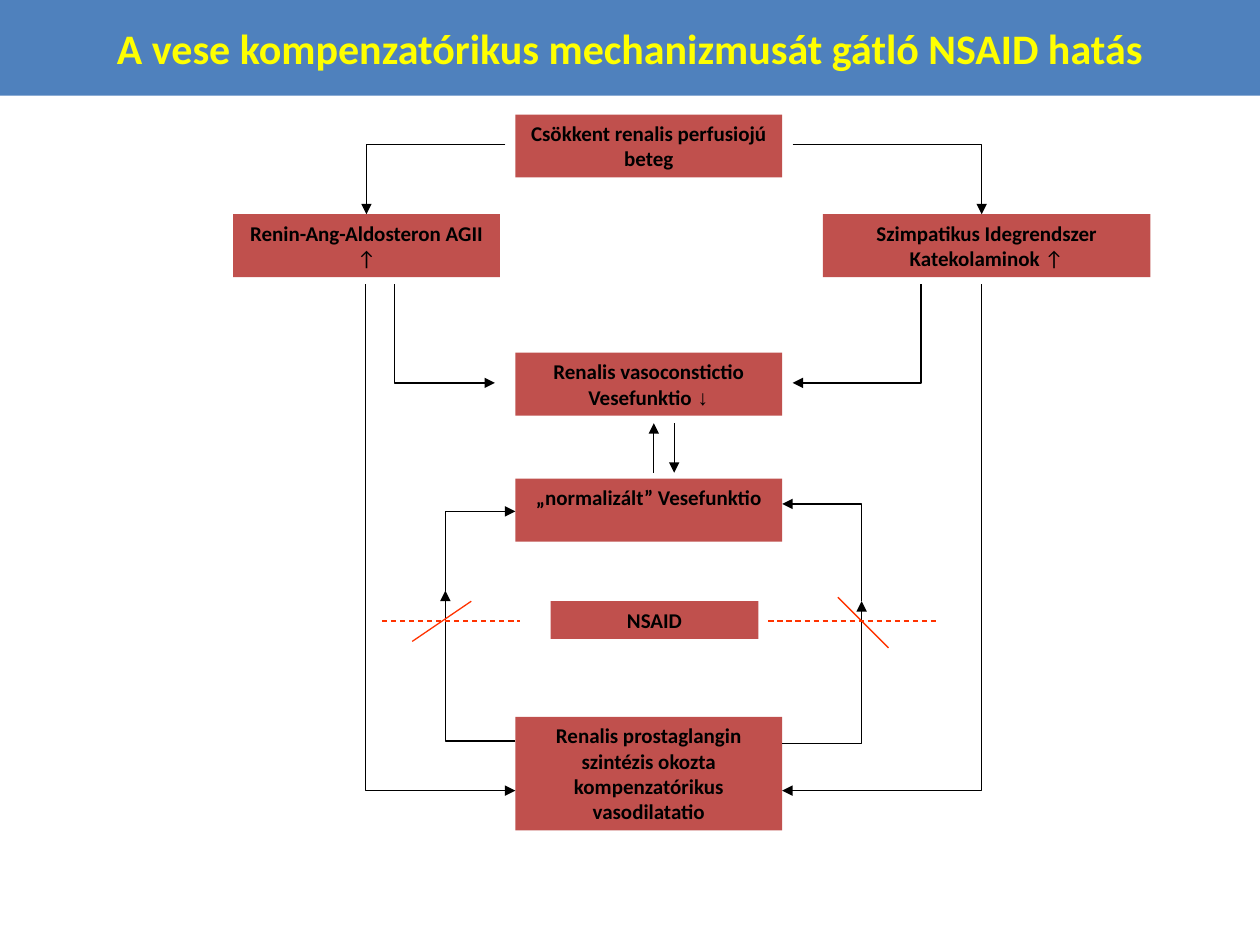
from lxml.etree import SubElement
from pptx import Presentation
from pptx.dml.color import RGBColor
from pptx.enum.dml import MSO_LINE
from pptx.enum.shapes import MSO_CONNECTOR, MSO_SHAPE
from pptx.enum.text import MSO_ANCHOR, MSO_AUTO_SIZE, PP_ALIGN
from pptx.oxml.ns import qn
from pptx.util import Cm, Pt

BANNER, BOX, TITLE, INK, BLOCK = "4F81BD", "C0504D", "FFFF00", "000000", "FF3300"
MIDDLE_LEFT, BOX_WIDTH, BOX_HEIGHT = 10.39, 5.38, 1.27
MIDDLE_RIGHT = MIDDLE_LEFT + BOX_WIDTH


def paint(color_format, color):
    color_format.rgb = RGBColor.from_string(color)


def fill(shape, color):
    shape.fill.solid()
    paint(shape.fill.fore_color, color)


def add_run(paragraph, text, size, color, bold=True, font="Calibri"):
    run = paragraph.add_run()
    run.text = text
    run.font.name, run.font.size, run.font.bold = font, Pt(size), bold
    paint(run.font.color, color)


def add_title(slide, text):
    title = slide.shapes.title
    title.left, title.top, title.width, title.height = Cm(0), Cm(0), Cm(25.4), Cm(1.93)
    fill(title, BANNER)
    frame = title.text_frame
    frame.auto_size = MSO_AUTO_SIZE.NONE
    frame.vertical_anchor = MSO_ANCHOR.MIDDLE
    frame.paragraphs[0].alignment = PP_ALIGN.CENTER
    add_run(frame.paragraphs[0], text, 24, TITLE)


def add_box(slide, label, left, top, width=BOX_WIDTH, height=BOX_HEIGHT,
            trend="", trend_font="Calibri", trend_below=False):
    """Draw a labelled box; trend is the up or down sign after the label."""
    box = slide.shapes.add_shape(MSO_SHAPE.RECTANGLE, Cm(left), Cm(top), Cm(width), Cm(height))
    box.shadow.inherit = False
    fill(box, BOX)
    box.line.fill.background()
    frame = box.text_frame
    frame.word_wrap = True
    frame.vertical_anchor = MSO_ANCHOR.TOP
    paragraph = frame.paragraphs[0]
    paragraph.alignment = PP_ALIGN.CENTER
    add_run(paragraph, label, 12, INK)
    if trend_below:
        paragraph.add_line_break()
    if trend:
        add_run(paragraph, trend, 12, INK, bold=False, font=trend_font)


def add_line(slide, start, end, color=INK, arrow=None, dashed=False, kind=MSO_CONNECTOR.STRAIGHT):
    """Draw a line; arrow is "headEnd" (at start), "tailEnd" (at end) or None."""
    line = slide.shapes.add_connector(kind, *map(Cm, start + end))
    paint(line.line.color, color)
    line.line.width = Pt(0.75)
    if dashed:
        line.line.dash_style = MSO_LINE.DASH
    properties = line._element.spPr
    if arrow:
        SubElement(properties.find(qn("a:ln")), qn("a:" + arrow), type="triangle")
    SubElement(properties, qn("a:effectLst"))
    return line


def add_elbow(slide, start, end, arrow):
    """Run level from start to the column of end, then turn upright to end."""
    elbow = add_line(slide, start, end, arrow=arrow, kind=MSO_CONNECTOR.ELBOW)
    guides = elbow._element.spPr.find(".//" + qn("a:avLst"))
    SubElement(guides, qn("a:gd"), name="adj1", fmla="val 100000")


def add_boxes(slide):
    add_box(slide, "Csökkent renalis perfusiojú beteg", MIDDLE_LEFT, 2.31)
    add_box(slide, "Renin-Ang-Aldosteron AGII", 4.7, 4.32, trend="↑", trend_below=True)
    add_box(slide, "Szimpatikus Idegrendszer Katekolaminok ", 16.59, 4.32, 6.6, trend="↑")
    add_box(slide, "Renalis vasoconstictio Vesefunktio ", MIDDLE_LEFT, 7.11,
            trend="↓", trend_font="Courier New")
    add_box(slide, "Renalis prostaglangin szintézis okozta kompenzatórikus vasodilatatio",
            MIDDLE_LEFT, 14.45, height=2.29)
    add_box(slide, "„normalizált” Vesefunktio", MIDDLE_LEFT, 9.65)
    add_box(slide, "NSAID", 11.1, 12.12, 4.19, 0.76)


def add_pathways(slide):
    to_column = [
        ((10.19, 2.92), (7.39, 4.32)),
        ((15.98, 2.92), (19.79, 4.32)),
        ((MIDDLE_LEFT, 14.94), (8.98, 11.91)),
        ((MIDDLE_RIGHT, 14.99), (17.37, 12.12)),
    ]
    to_middle = [
        ((9.98, 7.72), (7.95, 5.72)),
        ((15.98, 7.72), (18.57, 5.72)),
        ((MIDDLE_LEFT, 15.94), (7.37, 5.72)),
        ((MIDDLE_RIGHT, 15.94), (19.79, 5.72)),
        ((MIDDLE_LEFT, 10.31), (8.98, 11.91)),
        ((MIDDLE_RIGHT, 10.16), (17.37, 12.12)),
    ]
    for arrow, routes in (("tailEnd", to_column), ("headEnd", to_middle)):
        for start, end in routes:
            add_elbow(slide, start, end, arrow)
    add_line(slide, (13.59, 8.53), (13.59, 9.53), arrow="tailEnd")
    add_line(slide, (13.18, 9.53), (13.18, 8.53), arrow="tailEnd")


def add_blockades(slide):
    for start, end in (((7.7, 12.52), (10.49, 12.52)), ((15.49, 12.52), (18.9, 12.52))):
        add_line(slide, start, end, BLOCK, dashed=True)
    for start, end in (((8.31, 12.93), (9.5, 12.12)), ((16.89, 12.04), (17.91, 13.06))):
        add_line(slide, start, end, BLOCK)


def main():
    presentation = Presentation()
    presentation.slide_width, presentation.slide_height = Cm(25.4), Cm(19.05)
    slide = presentation.slides.add_slide(presentation.slide_layouts[5])
    add_title(slide, "A vese kompenzatórikus mechanizmusát gátló NSAID hatás")
    add_boxes(slide)
    add_pathways(slide)
    add_blockades(slide)
    presentation.save("out.pptx")


if __name__ == "__main__":
    main()
